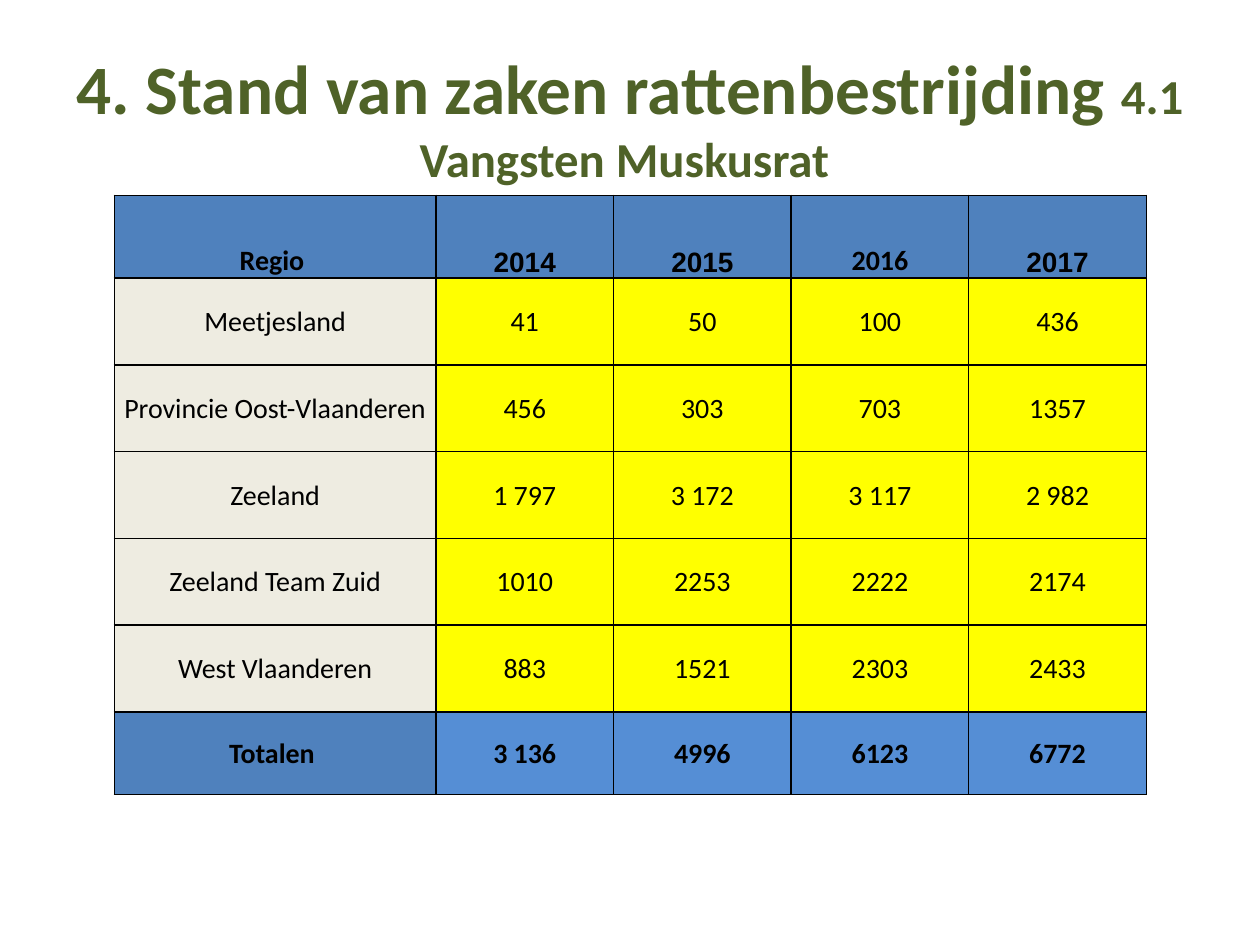
from lxml import etree
from pptx import Presentation
from pptx.dml.color import RGBColor
from pptx.enum import text
from pptx.oxml import ns
from pptx.util import Pt

COLORS = {
    "title": "4F6228", "ink": "000000", "head": "4F81BD",
    "region": "EEECE1", "catch": "FFFF00", "total": "558ED5",
}
ROWS = [
    ["Regio ", "2014", "2015", "2016", "2017"],
    ["Meetjesland", "41", "50", "100", "436"],
    ["Provincie Oost-Vlaanderen", "456", "303", "703", "1357"],
    ["Zeeland", "1 797", "3 172", "3 117", "2 982"],
    ["Zeeland Team Zuid", "1010", "2253", "2222", "2174"],
    ["West Vlaanderen", "883", "1521", "2303", "2433"],
    ["Totalen ", "3 136", "4996", "6123", "6772"],
]
WIDTHS = [183.8] + [101.5] * 4
HEIGHTS = [47.3] + [49.6] * 5 + [47.3]


def style(run, size, color, bold, face="Calibri"):
    font = run.font
    font.size, font.bold, font.name = Pt(size), bold, face
    font.color.rgb = RGBColor.from_string(COLORS[color])


def border(cell):
    """Draw a 1 pt line on all four sides; call before setting the fill."""
    props = cell._tc.get_or_add_tcPr()
    for side in ("lnL", "lnR", "lnT", "lnB"):
        line = etree.SubElement(props, ns.qn("a:" + side), w=str(Pt(1)))
        fill = etree.SubElement(line, ns.qn("a:solidFill"))
        etree.SubElement(fill, ns.qn("a:srgbClr"), val=COLORS["ink"])


prs = Presentation()
prs.slide_width, prs.slide_height = Pt(720), Pt(540)
slide = prs.slides.add_slide(prs.slide_layouts[5])

# Title
title = slide.shapes.title
title.left, title.top, title.width, title.height = Pt(36), Pt(21.6), Pt(648), Pt(90)
frame = title.text_frame
frame.word_wrap = True
frame.auto_size = text.MSO_AUTO_SIZE.NONE
frame.vertical_anchor = text.MSO_ANCHOR.MIDDLE
para = frame.paragraphs[0]
para.alignment = text.PP_ALIGN.CENTER
for words, size in (("4. Stand van zaken rattenbestrijding ", 39.6),
                    ("4.1 Vangsten Muskusrat ", 27.9)):
    run = para.add_run()
    run.text = words
    style(run, size, "title", True)

# Catches per region and year
table = slide.shapes.add_table(
    len(ROWS), len(WIDTHS), Pt(65.3), Pt(111.6),
    Pt(sum(WIDTHS)), Pt(sum(HEIGHTS))).table
for col, width in zip(table.columns, WIDTHS):
    col.width = Pt(width)
for row, height in zip(table.rows, HEIGHTS):
    row.height = Pt(height)

last = len(ROWS) - 1
for r, row in enumerate(ROWS):
    for c, words in enumerate(row):
        cell = table.cell(r, c)
        border(cell)
        if r == 0 or (r == last and c == 0):
            color = "head"
        elif r == last:
            color = "total"
        else:
            color = "catch" if c else "region"
        cell.fill.solid()
        cell.fill.fore_color.rgb = RGBColor.from_string(COLORS[color])
        cell.margin_left = cell.margin_right = cell.margin_top = Pt(0.7)
        cell.margin_bottom = Pt(0)
        cell.vertical_anchor = text.MSO_ANCHOR.MIDDLE if r else text.MSO_ANCHOR.BOTTOM
        para = cell.text_frame.paragraphs[0]
        para.text = words
        para.alignment = text.PP_ALIGN.CENTER
        face = "Arial" if r == 0 and words in ("2014", "2015", "2017") else "Calibri"
        style(para.runs[0], 16, "ink", r in (0, last), face)

prs.save("out.pptx")
